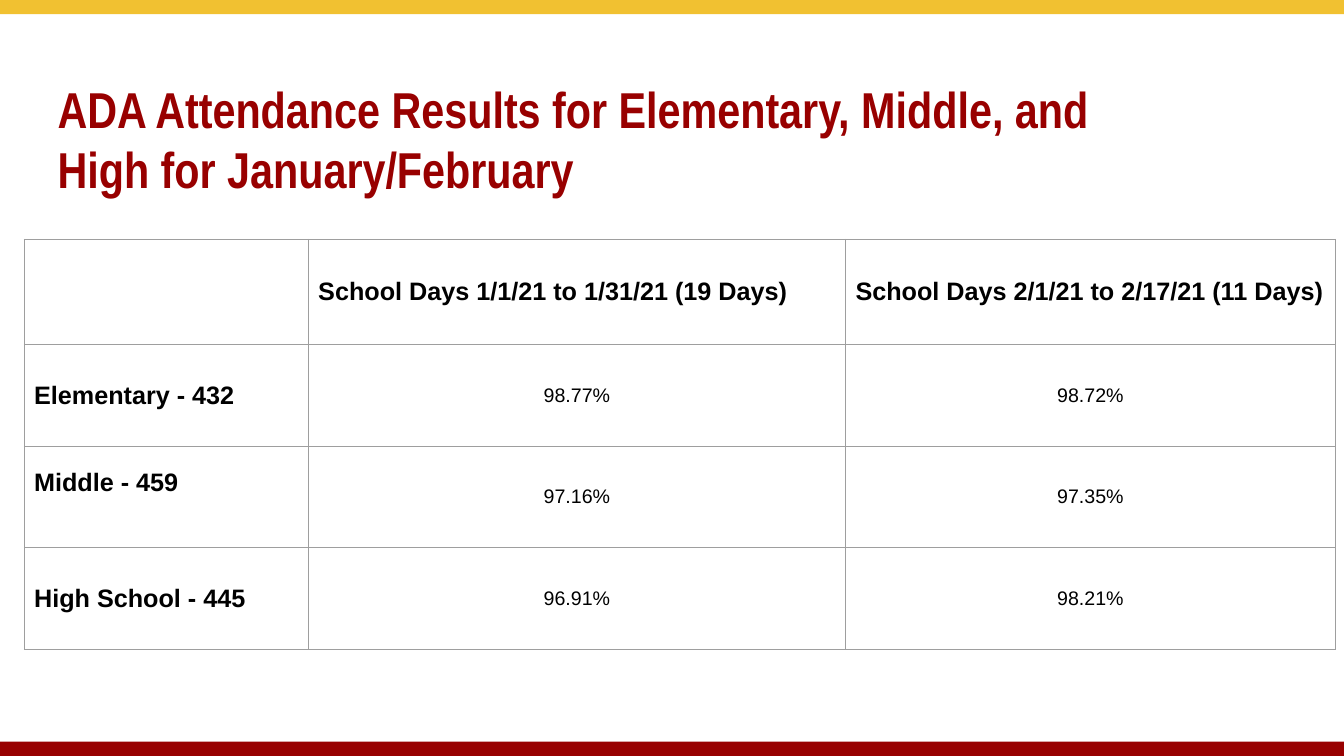
import pptx
import pptx.dml.color
import pptx.enum.shapes
import pptx.enum.text
import pptx.oxml
import pptx.oxml.ns
import pptx.util

Cm, Pt = pptx.util.Cm, pptx.util.Pt
RGBColor = pptx.dml.color.RGBColor
MIDDLE = pptx.enum.text.MSO_ANCHOR.MIDDLE
ALIGN = pptx.enum.text.PP_ALIGN

# Content
TITLE = "ADA Attendance Results for Elementary, Middle, and High for January/February"
ROWS = [
    ("", "School Days 1/1/21 to 1/31/21 (19 Days)", "School Days 2/1/21 to 2/17/21 (11 Days)"),
    ("Elementary - 432", "98.77%", "98.72%"),
    ("Middle - 459", "97.16%", "97.35%"),
    ("High School - 445", "96.91%", "98.21%"),
]

# Colours and sizes
GOLD = RGBColor(0xF1, 0xC1, 0x31)
DARK_RED = RGBColor(0x98, 0x00, 0x00)
BLACK = RGBColor(0x00, 0x00, 0x00)
BORDER_GREY = RGBColor(0x9E, 0x9E, 0x9E)
SLIDE_WIDTH, SLIDE_HEIGHT = Cm(33.87), Cm(19.05)
BAR_HEIGHT = Cm(0.36)
COLUMN_WIDTHS = [Cm(7.16), Cm(13.54), Cm(12.34)]
ROW_HEIGHTS = [Cm(2.65)] + [Cm(2.56)] * 3
CELL_MARGIN = Cm(0.25)
RAISED_LABEL, RAISED_MARGIN = "Middle - 459", Cm(0.97)


def add_run(paragraph, text, font_name, size, color, bold):
    run = paragraph.add_run()
    run.text = text
    run.font.name = font_name
    run.font.size = Pt(size)
    run.font.color.rgb = color
    run.font.bold = bold


def add_bar(slide, top, color):
    bar = slide.shapes.add_shape(
        pptx.enum.shapes.MSO_SHAPE.RECTANGLE, 0, top, SLIDE_WIDTH, BAR_HEIGHT)
    bar.shadow.inherit = False
    bar.fill.solid()
    bar.fill.fore_color.rgb = color
    bar.line.fill.background()


def set_borders(cell):
    properties = cell._tc.get_or_add_tcPr()
    for position, side in enumerate(("lnL", "lnR", "lnT", "lnB")):
        border = pptx.oxml.parse_xml(
            f'<a:{side} {pptx.oxml.ns.nsdecls("a")} w="{Pt(0.75)}"><a:solidFill>'
            f'<a:srgbClr val="{BORDER_GREY}"/></a:solidFill></a:{side}>')
        properties.insert(position, border)


def add_title(slide):
    title = slide.shapes.title
    title.left, title.top, title.width, title.height = Cm(1.45), Cm(1.85), Cm(28.4), Cm(3.28)
    frame = title.text_frame
    frame.margin_left = frame.margin_right = frame.margin_top = frame.margin_bottom = 0
    frame.word_wrap = True
    frame.auto_size = pptx.enum.text.MSO_AUTO_SIZE.NONE
    frame.vertical_anchor = MIDDLE
    paragraph = frame.paragraphs[0]
    paragraph.alignment = ALIGN.LEFT
    add_run(paragraph, TITLE, "Arial Narrow", 36, DARK_RED, True)


def add_attendance_table(slide):
    table = slide.shapes.add_table(
        len(ROWS), len(COLUMN_WIDTHS), Cm(0.61), Cm(6.03),
        sum(COLUMN_WIDTHS), sum(ROW_HEIGHTS)).table
    table.first_row = table.horz_banding = False
    for column, width in zip(table.columns, COLUMN_WIDTHS):
        column.width = width
    for row, height in zip(table.rows, ROW_HEIGHTS):
        row.height = height

    for row_index, texts in enumerate(ROWS):
        for column_index, text in enumerate(texts):
            cell = table.cell(row_index, column_index)
            cell.fill.background()
            set_borders(cell)
            cell.vertical_anchor = MIDDLE
            cell.margin_left = cell.margin_right = CELL_MARGIN
            cell.margin_top = CELL_MARGIN
            cell.margin_bottom = RAISED_MARGIN if text == RAISED_LABEL else CELL_MARGIN
            if not text:
                continue
            heading = row_index == 0 or column_index == 0
            paragraph = cell.text_frame.paragraphs[0]
            paragraph.alignment = ALIGN.LEFT if heading else ALIGN.CENTER
            add_run(paragraph, text, "Arial", 18 if heading else 14, BLACK, heading)


def main():
    presentation = pptx.Presentation()
    presentation.slide_width, presentation.slide_height = SLIDE_WIDTH, SLIDE_HEIGHT
    slide = presentation.slides.add_slide(presentation.slide_layouts.get_by_name("Title Only"))

    # Bars along the top and bottom edges
    add_bar(slide, 0, GOLD)
    add_bar(slide, SLIDE_HEIGHT - BAR_HEIGHT, DARK_RED)

    add_title(slide)
    add_attendance_table(slide)
    presentation.save("out.pptx")


if __name__ == "__main__":
    main()
